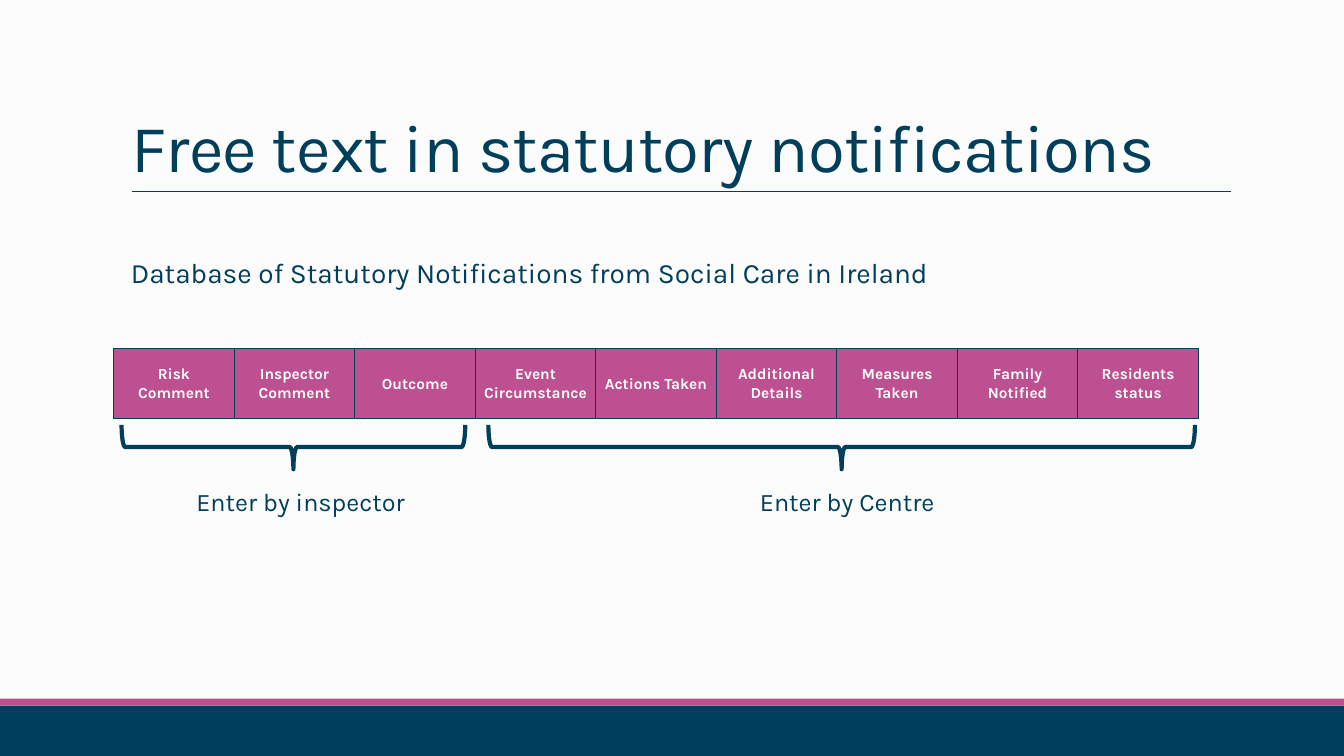
import pptx
import pptx.chart.data
import pptx.dml.color
import pptx.enum.shapes
import pptx.enum.text
import pptx.oxml
import pptx.oxml.ns
import pptx.util

Pt = pptx.util.Pt
RGB = pptx.dml.color.RGBColor
Shape = pptx.enum.shapes.MSO_SHAPE
Align = pptx.enum.text.PP_ALIGN
Anchor = pptx.enum.text.MSO_ANCHOR

NAVY = RGB(0x00, 0x3F, 0x5C)
PINK = RGB(0xBC, 0x50, 0x90)
WHITE = RGB(0xFF, 0xFF, 0xFF)
PAPER = RGB(0xFC, 0xFC, 0xFC)
FONT = "Karla"
WIDE, HIGH = 960, 540

FIELDS = ["Risk Comment", "Inspector Comment", "Outcome",
          "Event Circumstance", "Actions Taken", "Additional Details",
          "Measures Taken", "Family Notified", "Residents status"]


def write(frame, text, size=18, color=NAVY, bold=False, align=Align.LEFT,
          lead=None, track=None):
    """Put one formatted paragraph into a text frame."""
    para = frame.paragraphs[0]
    para.alignment = align
    if lead:
        para.line_spacing = lead
    run = para.add_run()
    run.text = text
    font = run.font
    font.name, font.size, font.bold = FONT, Pt(size), bold
    font.color.rgb = color
    if track is not None:
        run._r.get_or_add_rPr().set("spc", str(track))


def label(slide, box, text, **style):
    """Add a wrapped text box."""
    frame = slide.shapes.add_textbox(*map(Pt, box)).text_frame
    frame.word_wrap = True
    write(frame, text, **style)


def band(slide, box, color):
    """Add a plain filled bar."""
    bar = slide.shapes.add_shape(Shape.RECTANGLE, *map(Pt, box))
    bar.shadow.inherit = False
    bar.fill.solid()
    bar.fill.fore_color.rgb = color
    bar.line.fill.background()


def footer(slide, box):
    """Draw the footer block with its accent strip on top."""
    left, top, width, height = box
    strip = 5
    band(slide, (left, top + strip, width, height - strip), NAVY)
    band(slide, (left, top, width, strip), PINK)


def heading(slide, box, text):
    """Place the title and the rule beneath it."""
    left, top, width, height = box
    base = top + height
    rule = slide.shapes.add_connector(
        pptx.enum.shapes.MSO_CONNECTOR.STRAIGHT,
        Pt(left + 8), Pt(base), Pt(left + width + 1), Pt(base))
    rule.line.color.rgb = NAVY
    rule.line.width = Pt(0.5)
    rule._element.spPr.append(pptx.oxml.parse_xml(
        "<a:effectLst %s/>" % pptx.oxml.ns.nsdecls("a")))
    title = slide.shapes.title
    title.left, title.top, title.width, title.height = map(Pt, box)
    frame = title.text_frame
    frame.auto_size = pptx.enum.text.MSO_AUTO_SIZE.NONE
    frame.vertical_anchor = Anchor.BOTTOM
    write(frame, text, size=48, lead=0.85, track=-50)


def border(cell):
    """Outline all four sides of a table cell."""
    props = cell._tc.get_or_add_tcPr()
    for spot, side in enumerate(("lnL", "lnR", "lnT", "lnB")):
        props.insert(spot, pptx.oxml.parse_xml(
            f'<a:{side} {pptx.oxml.ns.nsdecls("a")} w="{Pt(1)}"><a:solidFill>'
            f'<a:srgbClr val="{NAVY}"/></a:solidFill></a:{side}>'))


def fields(slide, box, names):
    """Lay out the field names as a one-row table."""
    table = slide.shapes.add_table(1, len(names), *map(Pt, box)).table
    table.first_row = table.horz_banding = False
    for col, name in enumerate(names):
        table.columns[col].width = Pt(box[2] / len(names))
        cell = table.cell(0, col)
        cell.fill.solid()
        cell.fill.fore_color.rgb = PINK
        cell.vertical_anchor = Anchor.MIDDLE
        cell.margin_left = cell.margin_right = Pt(5)
        cell.margin_top = cell.margin_bottom = 0
        border(cell)
        write(cell.text_frame, name, size=11, color=WHITE, bold=True,
              align=Align.CENTER, lead=1.07)


def brace(slide, box):
    """Draw a brace that opens upward and fills the box."""
    left, top, width, height = box
    mark = slide.shapes.add_shape(
        Shape.RIGHT_BRACE, Pt(left + (width - height) / 2),
        Pt(top + (height - width) / 2), Pt(height), Pt(width))
    mark.rotation = 90
    mark.shadow.inherit = False
    mark.fill.background()
    mark.line.color.rgb = NAVY
    mark.line.width = Pt(3)


def group(slide, box, text, inset, span):
    """Draw a brace with its caption below."""
    left, top, width, height = box
    brace(slide, (left, top, width, 31.7))
    label(slide, (left + inset, top + 40, span, height - 40), text)


def main():
    """Build and save the slide."""
    deck = pptx.Presentation()
    deck.slide_width, deck.slide_height = Pt(WIDE), Pt(HIGH)
    slide = deck.slides.add_slide(deck.slide_layouts[5])
    back = slide.background.fill
    back.solid()
    back.fore_color.rgb = PAPER

    footer(slide, (0, 499, WIDE, HIGH - 499))
    heading(slide, (86.4, 22.3, 792, 114.5),
            "Free text in statutory notifications")
    label(slide, (86.4, 182, 792, 32),
          "Database of Statutory Notifications from Social Care in Ireland",
          size=20, lead=0.9)
    fields(slide, (81.2, 249, 774.9, 49.7), FIELDS)
    group(slide, (86.8, 303.5, 245.5, 69), "Enter by inspector", 46.4, 165.6)
    group(slide, (348.8, 303.5, 504.7, 69), "Enter by Centre", 186.9, 150.5)
    deck.save("out.pptx")


if __name__ == "__main__":
    main()
